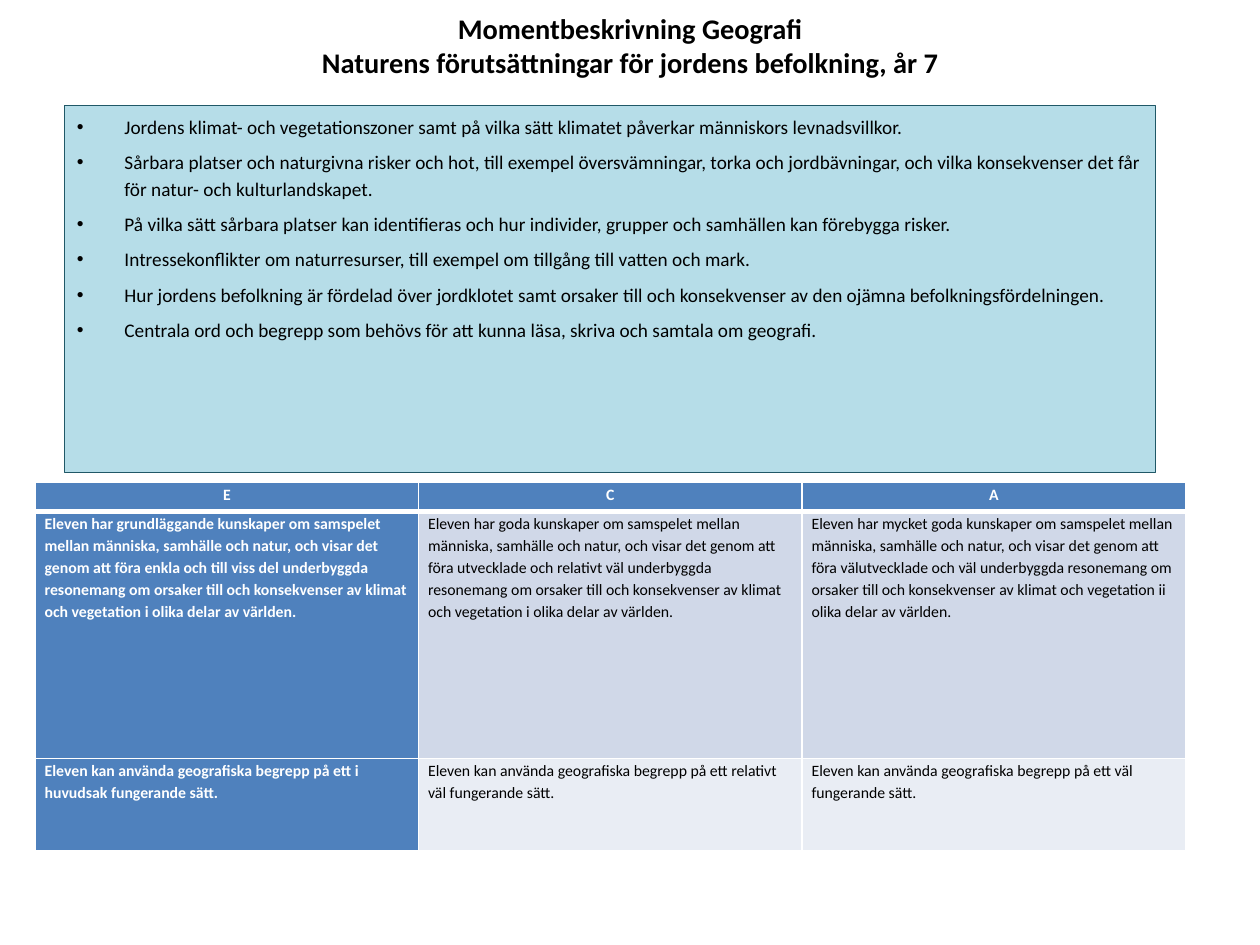
from dataclasses import dataclass

from lxml.etree import SubElement
from pptx import Presentation
from pptx.dml.color import RGBColor
from pptx.enum.shapes import MSO_SHAPE
from pptx.enum.text import MSO_ANCHOR, MSO_AUTO_SIZE, PP_ALIGN
from pptx.oxml import parse_xml
from pptx.oxml.ns import nsdecls, qn
from pptx.slide import Slide
from pptx.table import _Cell
from pptx.util import Cm, Pt

FONT = "Calibri"
COLORS = {
    "black": "000000",
    "white": "FFFFFF",
    "content": "B6DDE8",
    "content_line": "205867",
    "header": "4F81BD",
    "band_dark": "D0D8E8",
    "band_light": "E9EDF4",
}

TITLE = "Momentbeskrivning Geografi\vNaturens förutsättningar för jordens befolkning, år 7"
CONTENT = [
    "Jordens klimat- och vegetationszoner samt på vilka sätt klimatet påverkar människors levnadsvillkor.",
    "Sårbara platser och naturgivna risker och hot, till exempel översvämningar, torka och jordbävningar, "
    "och vilka konsekvenser det får för natur- och kulturlandskapet.",
    "På vilka sätt sårbara platser kan identifieras och hur individer, grupper och samhällen kan förebygga risker.",
    "Intressekonflikter om naturresurser, till exempel om tillgång till vatten och mark.",
    "Hur jordens befolkning är fördelad över jordklotet samt orsaker till och konsekvenser av den ojämna "
    "befolkningsfördelningen.",
    "Centrala ord och begrepp som behövs för att kunna läsa, skriva och samtala om geografi.",
]


@dataclass
class GradeRow:
    height: float
    fill: str
    texts: tuple[str, str, str]


GRADE_ROWS = [
    GradeRow(0.58, "header", ("E", "C", "A")),
    GradeRow(4.98, "band_dark", (
        "Eleven har grundläggande kunskaper om samspelet mellan människa, samhälle och natur, och visar det "
        "genom att föra enkla och till viss del underbyggda resonemang om orsaker till och konsekvenser av "
        "klimat och vegetation i olika delar av världen.",
        "Eleven har goda kunskaper om samspelet mellan människa, samhälle och natur, och visar det genom att "
        "föra utvecklade och relativt väl underbyggda resonemang om orsaker till och konsekvenser av klimat "
        "och vegetation i olika delar av världen.",
        "Eleven har mycket goda kunskaper om samspelet mellan människa, samhälle och natur, och visar det "
        "genom att föra välutvecklade och väl underbyggda resonemang om orsaker till och konsekvenser av "
        "klimat och vegetation ii olika delar av världen.",
    )),
    GradeRow(1.85, "band_light", (
        "Eleven kan använda geografiska begrepp på ett i huvudsak fungerande sätt.",
        "Eleven kan använda geografiska begrepp på ett relativt väl fungerande sätt.",
        "Eleven kan använda geografiska begrepp på ett väl fungerande sätt.",
    )),
]


def color(name: str) -> RGBColor:
    return RGBColor.from_string(COLORS[name])


def format_runs(paragraph, size: float, color_name: str, bold: bool) -> None:
    for run in paragraph.runs:
        run.font.name = FONT
        run.font.size = Pt(size)
        run.font.bold = bold
        run.font.color.rgb = color(color_name)


def draw_title(slide: Slide) -> None:
    title = slide.shapes.title
    title.left, title.top, title.width, title.height = Cm(1.27), Cm(0.2), Cm(22.86), Cm(1.43)
    text_frame = title.text_frame
    text_frame.text = TITLE
    text_frame.auto_size = MSO_AUTO_SIZE.NONE
    text_frame.margin_top = text_frame.margin_bottom = 0
    text_frame.vertical_anchor = MSO_ANCHOR.MIDDLE
    paragraph = text_frame.paragraphs[0]
    paragraph.alignment = PP_ALIGN.CENTER
    format_runs(paragraph, 16.2, "black", True)


def add_bullet(paragraph) -> None:
    properties = paragraph._p.get_or_add_pPr()
    properties.set("marL", str(Cm(0.96)))
    properties.set("indent", str(-Cm(0.96)))
    SubElement(properties, qn("a:buFont"), typeface="Arial")
    SubElement(properties, qn("a:buChar"), char="•")


def draw_content(slide: Slide) -> None:
    shape = slide.shapes.add_shape(MSO_SHAPE.RECTANGLE, Cm(1.3), Cm(2.13), Cm(22), Cm(7.39))
    shape.shadow.inherit = False
    shape.fill.solid()
    shape.fill.fore_color.rgb = color("content")
    shape.line.color.rgb = color("content_line")
    shape.line.width = Pt(0.75)
    text_frame = shape.text_frame
    text_frame.word_wrap = True
    text_frame.vertical_anchor = MSO_ANCHOR.TOP
    text_frame.text = "\n".join(CONTENT)
    for paragraph in text_frame.paragraphs:
        paragraph.alignment = PP_ALIGN.LEFT
        paragraph.line_spacing = 1.15
        paragraph.space_after = Pt(5)
        add_bullet(paragraph)
        format_runs(paragraph, 11, "black", False)


def add_borders(cell: _Cell, top: float, bottom: float) -> None:
    widths = {"lnL": 1, "lnR": 1, "lnT": top, "lnB": bottom}
    properties = cell._tc.get_or_add_tcPr()
    for index, (tag, width) in enumerate(widths.items()):
        properties.insert(index, parse_xml(
            f'<a:{tag} {nsdecls("a")} w="{Pt(width)}"><a:solidFill>'
            f'<a:srgbClr val="{COLORS["white"]}"/></a:solidFill></a:{tag}>'
        ))


def fill_cell(cell: _Cell, text: str, fill: str, is_header: bool, is_first: bool) -> None:
    emphasized = is_header or is_first
    cell.margin_left = cell.margin_right = Cm(0.19)
    cell.margin_top = cell.margin_bottom = 0
    cell.fill.solid()
    cell.fill.fore_color.rgb = color("header" if emphasized else fill)
    cell.text_frame.text = text
    paragraph = cell.text_frame.paragraphs[0]
    paragraph.line_spacing = 1.15
    paragraph.alignment = PP_ALIGN.CENTER if is_header else PP_ALIGN.LEFT
    if not is_header:
        paragraph.space_after = Pt(10 if is_first else 5)
    format_runs(paragraph, 9, "white" if emphasized else "black", emphasized)


def draw_grades(slide: Slide) -> None:
    column_width = 7.73
    height = sum(row.height for row in GRADE_ROWS)
    frame = slide.shapes.add_table(
        len(GRADE_ROWS), 3, Cm(0.71), Cm(9.73), Cm(3 * column_width), Cm(height)
    )
    table = frame.table
    for column in table.columns:
        column.width = Cm(column_width)
    for row_index, row in enumerate(GRADE_ROWS):
        table.rows[row_index].height = Cm(row.height)
        for column_index, text in enumerate(row.texts):
            cell = table.cell(row_index, column_index)
            fill_cell(cell, text, row.fill, row_index == 0, column_index == 0)
            add_borders(cell, 3 if row_index == 1 else 1, 3 if row_index == 0 else 1)


def main() -> None:
    presentation = Presentation()
    presentation.slide_width = Cm(25.4)
    presentation.slide_height = Cm(19.05)
    slide = presentation.slides.add_slide(presentation.slide_layouts[5])
    draw_title(slide)
    draw_grades(slide)
    draw_content(slide)
    presentation.save("out.pptx")


if __name__ == "__main__":
    main()
